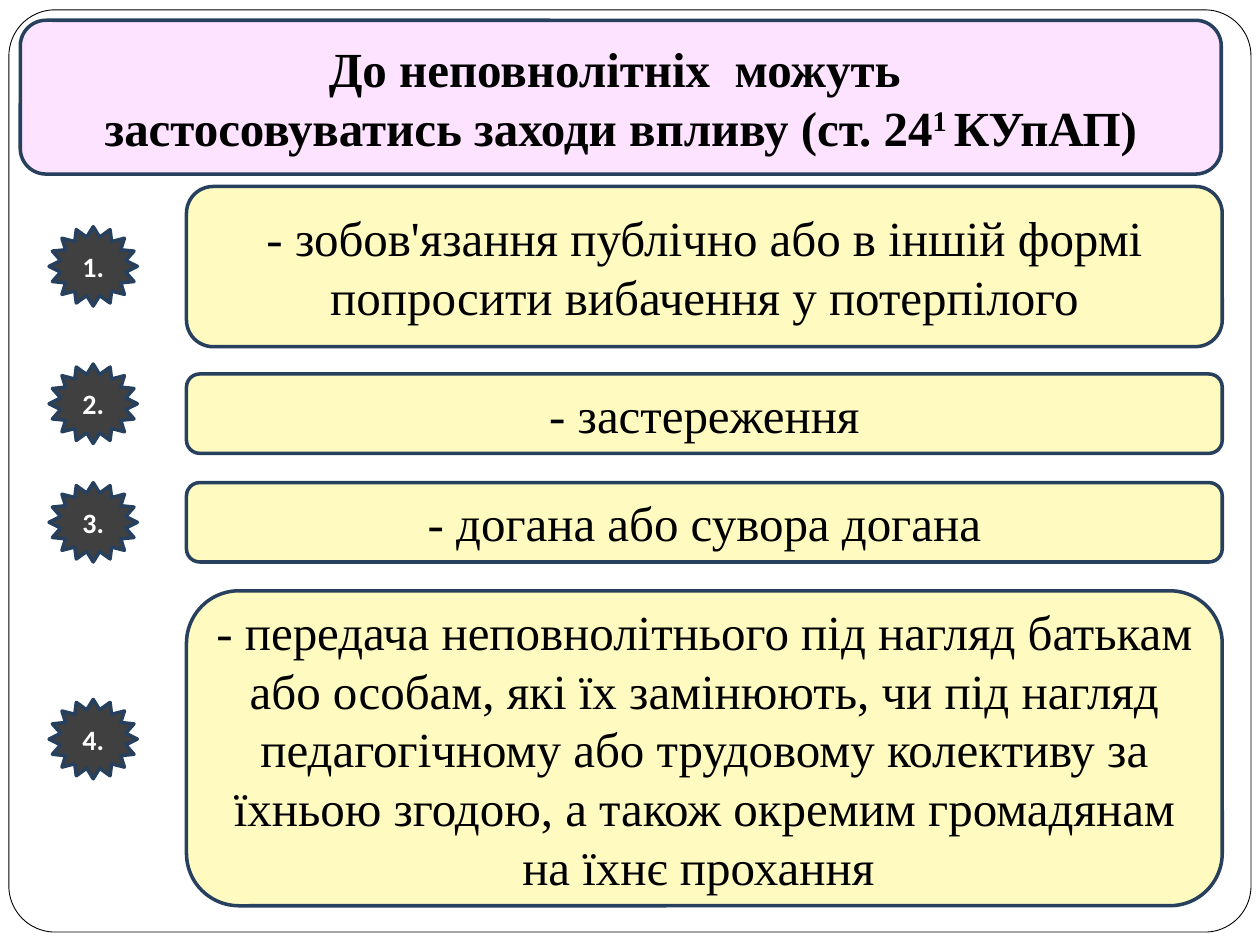
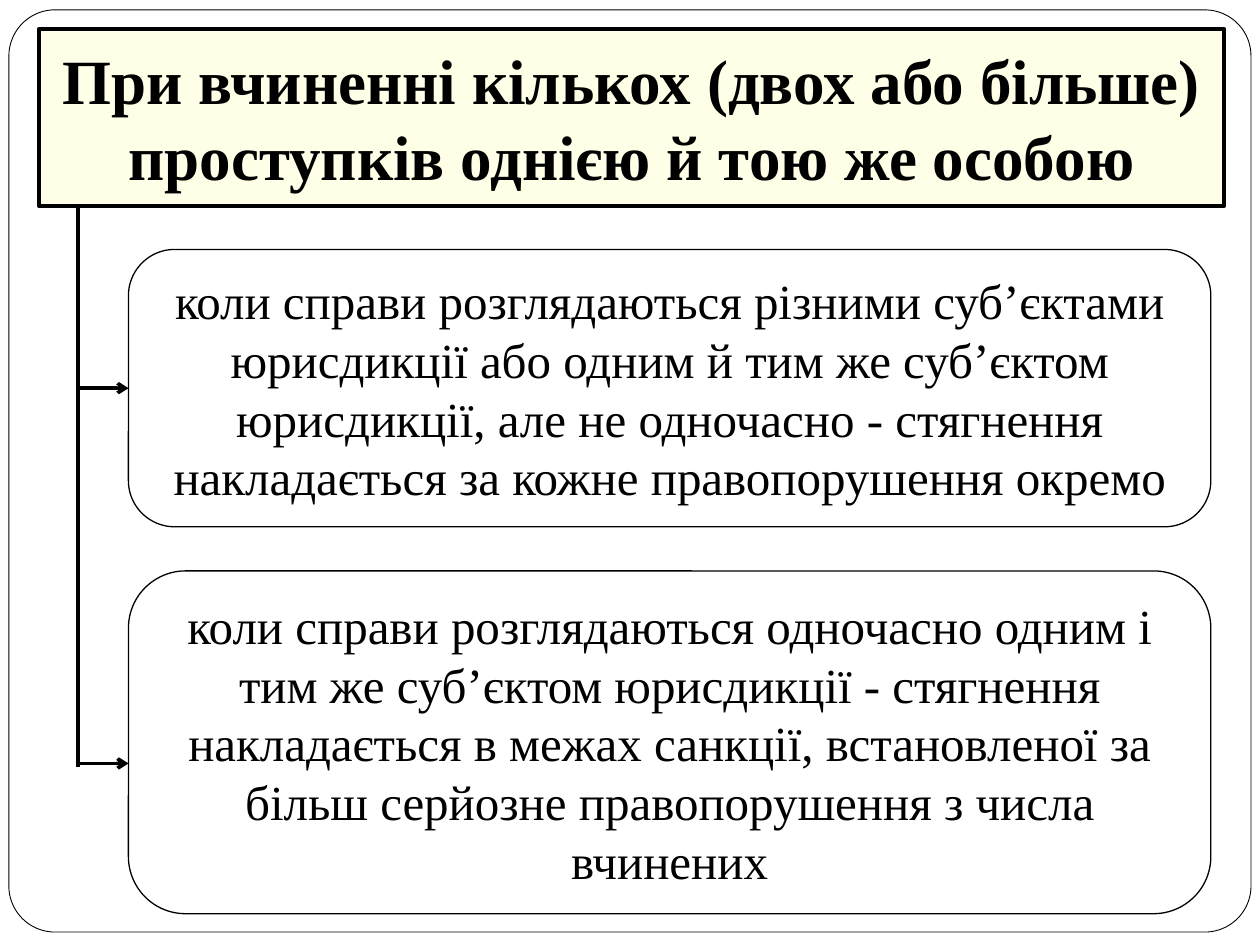
"""Builds two slides on measures and penalties for administrative offences."""
from dataclasses import dataclass

from lxml import etree
from pptx import Presentation
from pptx import util as u
from pptx.dml.color import RGBColor
from pptx.enum import shapes, text
from pptx.oxml import ns


@dataclass(frozen=True)
class Theme:
    black: str = "000000"
    white: str = "FFFFFF"
    navy: str = "27405E"
    charcoal: str = "404040"
    pink: str = "FDE3FF"
    cream: str = "FFFAC0"
    yellow: str = "FFFF00"
    serif: str = "Times New Roman"
    sans: str = "Calibri"
    heading: int = 36
    body: int = 28
    badge: int = 16
    hairline: float = 0.5
    thin: float = 0.75
    medium: float = 2
    thick: float = 2.25


class Deck:
    def __init__(self, theme):
        self.theme = theme
        self.prs = Presentation()
        self.prs.slide_width, self.prs.slide_height = u.Cm(25.4), u.Cm(19.05)
        self.slide = None

    def new_slide(self):
        t = self.theme
        self.slide = self.prs.slides.add_slide(self.prs.slide_layouts[6])
        frame = self.box(shapes.MSO_SHAPE.ROUNDED_RECTANGLE, (0.18, 0.2, 25.04, 18.59),
                         t.white, t.black, t.hairline)
        frame.adjustments[0] = 0.05

    def box(self, kind, place, fill, line, weight):
        shape = self.slide.shapes.add_shape(kind, *map(u.Cm, place))
        shape.shadow.inherit = False
        if fill:
            shape.fill.solid()
            shape.fill.fore_color.rgb = RGBColor.from_string(fill)
        else:
            shape.fill.background()
        shape.line.color.rgb = RGBColor.from_string(line)
        shape.line.width = u.Pt(weight)
        return shape

    def label(self, shape, words, size=None, font=None, color=None, bold=False):
        t = self.theme
        frame = shape.text_frame
        frame.word_wrap = True
        frame.vertical_anchor = text.MSO_ANCHOR.MIDDLE
        frame.text = words
        for paragraph in frame.paragraphs:
            paragraph.alignment = text.PP_ALIGN.CENTER
            for run in paragraph.runs:
                self.style(run, size or t.body, font or t.serif, color or t.black, bold)
        return frame

    def style(self, run, size, font, color, bold):
        run.font.size = u.Pt(size)
        run.font.name = font
        run.font.bold = bold
        run.font.color.rgb = RGBColor.from_string(color)

    def banner(self, place, words):
        t = self.theme
        banner = self.box(shapes.MSO_SHAPE.ROUNDED_RECTANGLE, place,
                          t.pink, t.navy, t.medium)
        return self.label(banner, words, bold=True)

    def add_run(self, paragraph, words, raised=False):
        t = self.theme
        run = paragraph.add_run()
        run.text = words
        self.style(run, t.body, t.serif, t.black, True)
        if raised:
            run.font._element.set("baseline", "30000")

    def measure(self, top, height, words):
        t = self.theme
        panel = self.box(shapes.MSO_SHAPE.FLOWCHART_ALTERNATE_PROCESS,
                         (3.76, top, 20.88, height), t.cream, t.navy, t.medium)
        self.label(panel, words)

    def badge(self, top, number):
        t = self.theme
        star = self.box(shapes.MSO_SHAPE.STAR_16_POINT, (0.99, top, 1.78, 1.6),
                        t.charcoal, t.navy, t.medium)
        self.label(star, f"{number}.", t.badge, t.sans, t.white, True)

    def heading(self, place, words):
        t = self.theme
        heading = self.box(shapes.MSO_SHAPE.RECTANGLE, place, t.yellow, t.black, t.thick)
        tint = heading._element.spPr.find(f".//{ns.qn('a:srgbClr')}")
        etree.SubElement(tint, ns.qn("a:alpha"), val="9000")
        self.label(heading, words, t.heading, bold=True)

    def case(self, top, height, words):
        t = self.theme
        case = self.box(shapes.MSO_SHAPE.ROUNDED_RECTANGLE, (2.59, top, 21.82, height),
                        None, t.black, t.thin)
        frame = self.label(case, words)
        frame.auto_size = text.MSO_AUTO_SIZE.SHAPE_TO_FIT_TEXT
        return case

    def line(self, start, end, weight, arrow=False):
        connector = self.slide.shapes.add_connector(
            shapes.MSO_CONNECTOR.STRAIGHT, *start, *end)
        connector.line.color.rgb = RGBColor.from_string(self.theme.black)
        connector.line.width = u.Pt(weight)
        properties = connector._element.spPr
        if arrow:
            etree.SubElement(properties.find(ns.qn("a:ln")), ns.qn("a:tailEnd"), type="arrow")
        etree.SubElement(properties, ns.qn("a:effectLst"))
        return connector


def measures_slide(deck):
    deck.new_slide()
    title = deck.banner((0.41, 0.41, 24.21, 3.1),
                        "До неповнолітніх  можуть \nзастосовуватись заходи впливу (ст. 24")
    deck.add_run(title.paragraphs[1], "1 ", raised=True)
    deck.add_run(title.paragraphs[1], "КУпАП)")
    measures = [
        (3.76, 3.23, 4.57, "- зобов'язання публічно або в іншій формі попросити вибачення у потерпілого"),
        (7.54, 1.6, 7.34, "- застереження"),
        (9.73, 1.6, 9.73, "- догана або сувора догана"),
        (11.91, 6.35, 14.1, "- передача неповнолітнього під нагляд батькам або особам, які їх замінюють, "
                            "чи під нагляд педагогічному або трудовому колективу за їхньою згодою, "
                            "а також окремим громадянам на їхнє прохання "),
    ]
    for number, (top, height, badge_top, words) in enumerate(measures, 1):
        deck.measure(top, height, words)
        deck.badge(badge_top, number)


def penalties_slide(deck):
    t = deck.theme
    deck.new_slide()
    deck.heading((0.79, 0.58, 23.88, 3.58),
                 "При вчиненні кількох (двох або більше) проступків однією й тою же особою")
    separate = deck.case(
        5.03, 5.59, "коли справи розглядаються різними суб’єктами юрисдикції або одним й тим же "
                    "суб’єктом юрисдикції, але не одночасно - стягнення накладається "
                    "за кожне правопорушення окремо")
    joint = deck.case(
        11.51, 6.91, "коли справи розглядаються одночасно одним і тим же суб’єктом юрисдикції - "
                     "стягнення накладається в межах санкції, встановленої за більш серйозне "
                     "правопорушення з числа вчинених")
    trunk = u.Cm(1.57)
    middle = separate.top + separate.height // 2
    branch = deck.line((trunk, middle), (separate.left, middle), t.medium, arrow=True)
    branch.end_connect(separate, 1)
    joint_level = u.Cm(15.39)
    deck.line((trunk, joint_level), (joint.left, joint_level), t.medium, arrow=True)
    deck.line((trunk, u.Cm(15.47)), (trunk, u.Cm(4.16)), t.thick)


def main():
    deck = Deck(Theme())
    measures_slide(deck)
    penalties_slide(deck)
    deck.prs.save("out.pptx")


if __name__ == "__main__":
    main()
